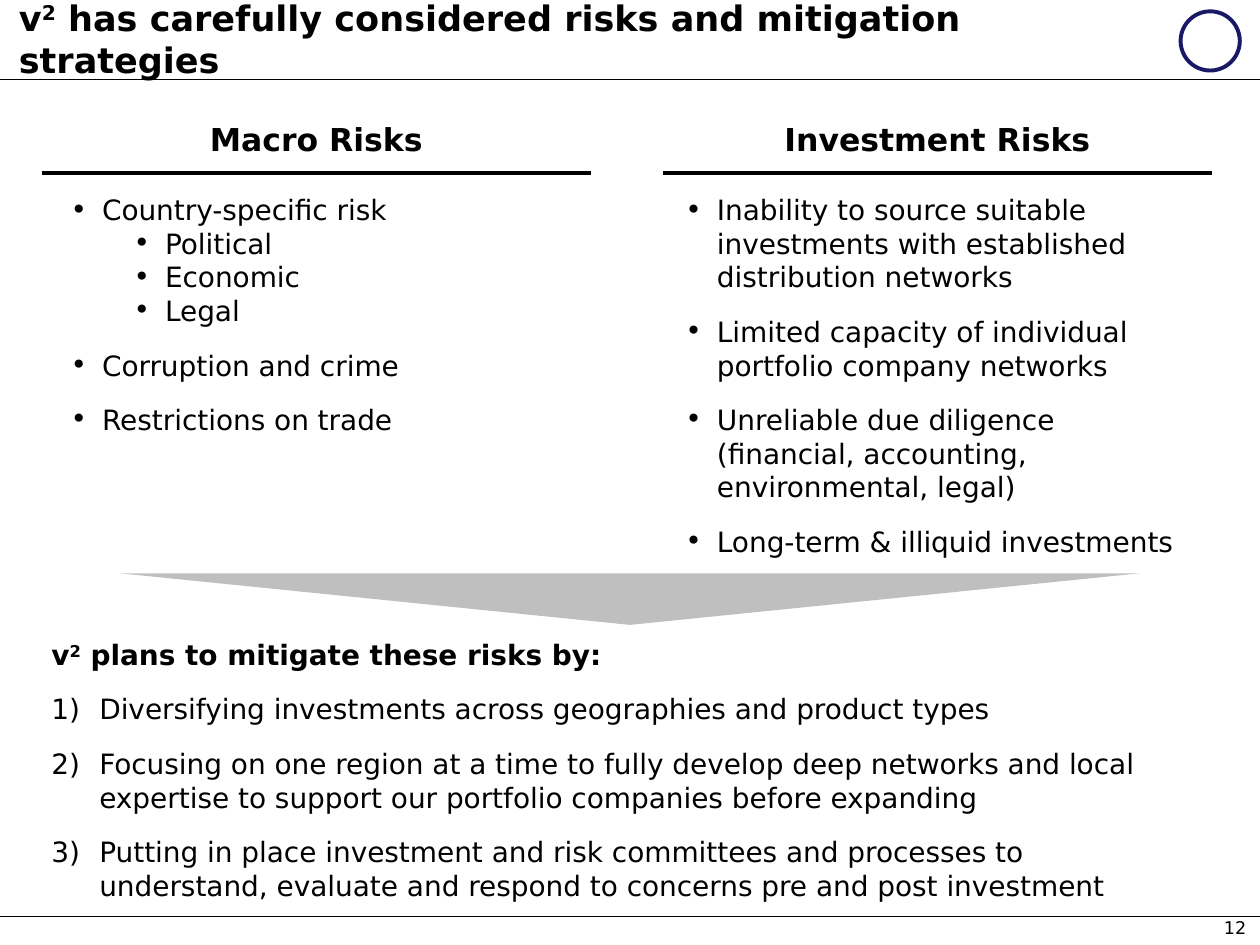
"""Build the slide on risks and mitigation strategies."""
import pptx
import pptx.dml.color
import pptx.enum.shapes
import pptx.enum.text
import pptx.oxml.ns
import pptx.util
from lxml import etree

Inches = pptx.util.Inches
Pt = pptx.util.Pt
Shape = pptx.enum.shapes.MSO_SHAPE
Align = pptx.enum.text.PP_ALIGN
Anchor = pptx.enum.text.MSO_ANCHOR
RGBColor = pptx.dml.color.RGBColor

BLACK = RGBColor(0x00, 0x00, 0x00)
NAVY = RGBColor(0x19, 0x19, 0x66)
GREY = RGBColor(0xBF, 0xBF, 0xBF)
FONT = "DejaVu Sans"
FUND = "v"

COLUMNS = [
    (5.26, 5.34, "Investment Risks", [
        (0, "Inability to source suitable investments with established distribution networks"),
        (0, "Limited capacity of individual portfolio company networks"),
        (0, "Unreliable due diligence (financial, accounting, environmental, legal)"),
        (0, "Long-term & illiquid investments"),
    ]),
    (0.33, 0.46, "Macro Risks", [
        (0, "Country-specific risk"),
        (1, "Political"),
        (1, "Economic"),
        (1, "Legal"),
        (0, "Corruption and crime"),
        (0, "Restrictions on trade"),
    ]),
][::-1]
STEPS = [
    "Diversifying investments across geographies and product types",
    "Focusing on one region at a time to fully develop deep networks and local "
    "expertise to support our portfolio companies before expanding",
    "Putting in place investment and risk committees and processes to "
    "understand, evaluate and respond to concerns pre and post investment",
]


def place(box, left, top, width, height, anchor=Anchor.TOP):
    """Move a text box or placeholder and set up its frame."""
    box.left, box.top = Inches(left), Inches(top)
    box.width, box.height = Inches(width), Inches(height)
    frame = box.text_frame
    frame.word_wrap = True
    frame.auto_size = pptx.enum.text.MSO_AUTO_SIZE.NONE
    frame.vertical_anchor = anchor
    return frame


def add_text_box(page, left, top, width, height, anchor=Anchor.TOP):
    """Add a text box and return its frame."""
    box = page.shapes.add_textbox(0, 0, 0, 0)
    return place(box, left, top, width, height, anchor)


def format_para(para, size, bold=False, align=Align.LEFT, before=0, after=0):
    """Set the spacing of a paragraph and the font of its runs."""
    para.alignment = align
    para.space_before, para.space_after = Pt(before), Pt(after)
    for span in para.runs:
        span.font.name = FONT
        span.font.size = Pt(size)
        span.font.bold = bold
        span.font.color.rgb = BLACK


def write_fund_line(para, rest):
    """Write the fund name with its raised 2, then the rest of the line."""
    for text in (FUND, "2", rest):
        para.add_run().text = text
    para.runs[1].font._element.set("baseline", "30000")


def set_bullet(para, left, hang, tag, **attributes):
    """Give a paragraph a hanging indent and a bullet or number."""
    properties = para._p.get_or_add_pPr()
    properties.set("marL", str(Inches(left)))
    properties.set("indent", str(-Inches(hang)))
    font = etree.SubElement(properties, pptx.oxml.ns.qn("a:buFont"))
    font.set("typeface", FONT)
    etree.SubElement(properties, pptx.oxml.ns.qn(tag), attributes)


def next_para(frame, index):
    """Return the first paragraph of a frame or add another."""
    return frame.add_paragraph() if index else frame.paragraphs[0]


def add_rule(page, left, right, top, weight):
    """Draw a horizontal black line."""
    rule = page.shapes.add_connector(
        pptx.enum.shapes.MSO_CONNECTOR.STRAIGHT,
        Inches(left), Inches(top), Inches(right), Inches(top))
    rule.line.color.rgb = BLACK
    rule.line.width = Pt(weight)
    etree.SubElement(rule._element.spPr, pptx.oxml.ns.qn("a:effectLst"))


def add_emblem(page):
    """Put a plain ring in the top right corner."""
    ring = page.shapes.add_shape(
        Shape.OVAL, Inches(9.37), Inches(0.09), Inches(0.47), Inches(0.47))
    ring.shadow.inherit = False
    ring.fill.background()
    ring.line.color.rgb = NAVY
    ring.line.width = Pt(2.25)


def add_pointer(page):
    """Draw the wide grey triangle that points down."""
    pointer = page.shapes.add_shape(
        Shape.ISOSCELES_TRIANGLE, Inches(0.95), Inches(4.55), Inches(8.1), Inches(0.41))
    pointer._element.spPr.get_or_add_xfrm().set("flipV", "1")
    pointer.shadow.inherit = False
    pointer.fill.solid()
    pointer.fill.fore_color.rgb = GREY
    pointer.line.fill.background()


def fill_column(page, heading_box, list_box, column):
    """Fill one column with its heading, rule and bullets."""
    left, list_left, heading, items = column
    frame = place(heading_box, left, 0.8, 4.36, 0.6, Anchor.MIDDLE)
    frame.text = heading
    format_para(frame.paragraphs[0], 18, bold=True, align=Align.CENTER)
    add_rule(page, left, left + 4.36, 1.37, 2.25)
    frame = place(list_box, list_left, 1.48, 4.19, 3.03)
    for index, (level, text) in enumerate(items):
        para = next_para(frame, index)
        para.text = text
        para.level = level
        format_para(para, 16, before=12 if index and level == 0 else 0)
        set_bullet(para, 0.25 + 0.5 * level, 0.25, "a:buChar", char="•")


def add_mitigation(page):
    """Add the numbered list of mitigation steps."""
    frame = add_text_box(page, 0.31, 5.01, 9.28, 2.22)
    lead = frame.paragraphs[0]
    write_fund_line(lead, " plans to mitigate these risks by:")
    format_para(lead, 16, bold=True, after=12)
    for text in STEPS:
        para = frame.add_paragraph()
        para.text = text
        format_para(para, 16, after=12)
        set_bullet(para, 0.38, 0.38, "a:buAutoNum", type="arabicParenR")


def add_page_number(page):
    """Add the page number at the bottom right."""
    frame = add_text_box(page, 9.19, 7.28, 0.7, 0.17, Anchor.MIDDLE)
    frame.margin_left = frame.margin_right = frame.margin_top = frame.margin_bottom = 0
    frame.text = "12"
    format_para(frame.paragraphs[0], 10, align=Align.RIGHT)


def main():
    """Build and save the deck."""
    deck = pptx.Presentation()
    deck.slide_width, deck.slide_height = Inches(10), Inches(7.5)
    page = deck.slides.add_slide(deck.slide_layouts.get_by_name("Comparison"))
    title, *bodies = page.placeholders
    for top in (7.27, 0.63):
        add_rule(page, 0, 10, top, 0.25)
    add_emblem(page)
    headline = place(title, 0.05, 0, 9.3, 0.61, Anchor.MIDDLE).paragraphs[0]
    write_fund_line(headline, " has carefully considered risks and mitigation strategies")
    format_para(headline, 20, bold=True)
    for heading_box, list_box, column in zip(bodies[::2], bodies[1::2], COLUMNS):
        fill_column(page, heading_box, list_box, column)
    add_mitigation(page)
    add_pointer(page)
    add_page_number(page)
    deck.save("out.pptx")


if __name__ == "__main__":
    main()
